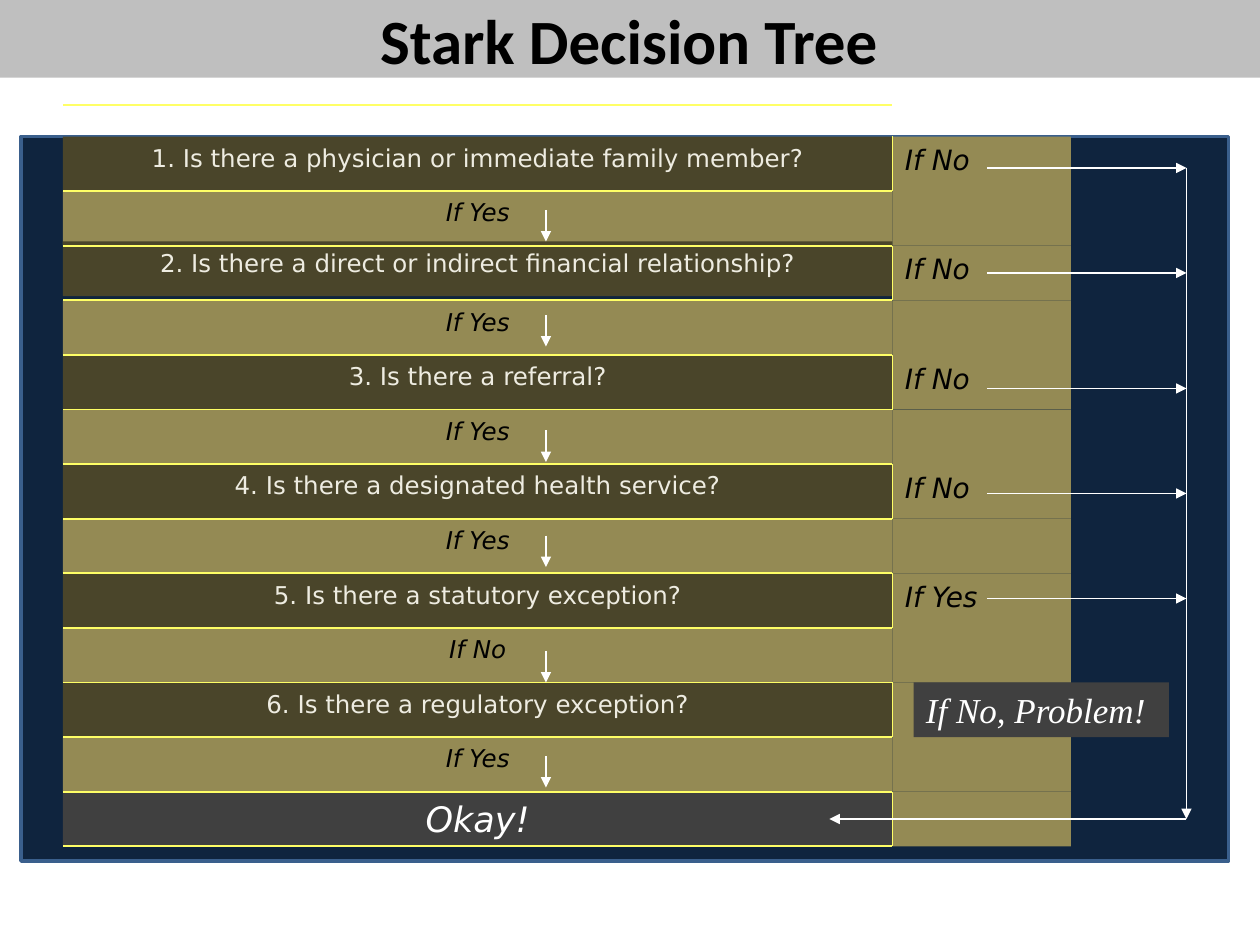
from pptx import Presentation
from pptx.dml.color import RGBColor
from pptx.enum.shapes import MSO_CONNECTOR as Connector, MSO_SHAPE as Shape
from pptx.enum.text import MSO_ANCHOR as Anchor, MSO_AUTO_SIZE as AutoSize, PP_ALIGN as Align
from pptx.oxml.ns import qn
from pptx.util import Pt
from lxml.etree import SubElement

BLACK = RGBColor(0x00, 0x00, 0x00)
WHITE = RGBColor(0xFF, 0xFF, 0xFF)
NAVY = RGBColor(0x0F, 0x24, 0x3E)
BLUE = RGBColor(0x3A, 0x5F, 0x8C)
SILVER = RGBColor(0xBF, 0xBF, 0xBF)
CHARCOAL = RGBColor(0x40, 0x40, 0x40)
KHAKI = RGBColor(0x94, 0x8A, 0x54)
OLIVE = RGBColor(0x4A, 0x45, 0x2A)
CREAM = RGBColor(0xEE, 0xEC, 0xE1)
YELLOW = RGBColor(0xFF, 0xFF, 0x66)
SANS = "DejaVu Sans"

# Content: question, answer leading to the side, answer leading down
TITLE = "Stark Decision Tree"
STEPS = [
    ("1. Is there a physician or immediate family member?", "If No", "If Yes"),
    ("2. Is there a direct or indirect financial relationship?", "If No", "If Yes"),
    ("3. Is there a referral?", "If No", "If Yes"),
    ("4. Is there a designated health service?", "If No", "If Yes"),
    ("5. Is there a statutory exception?", "If Yes", "If No"),
    ("6. Is there a regulatory exception?", "", "If Yes"),
]
OUTCOME = "Okay!"
PROBLEM = "If No, Problem!"

# Layout in points
LEFT, SPLIT, RIGHT = 36, 510, 612
TOP, ROW = 78, 31.2
QUESTION_SHIFT = {1: -2.4}  # the second question sits slightly higher
DOWN_X, DOWN_LENGTH = 312, 18
DOWN_TOPS = [120, 180, 246, 306, 372, 432]
BRANCH_X, RAIL_X = 564, 678
BRANCH_YS = [96, 156, 222, 282, 342]
OUTCOME_X, OUTCOME_Y = 474, 468

deck = Presentation()
deck.slide_width, deck.slide_height = Pt(720), Pt(540)
page = deck.slides.add_slide(deck.slide_layouts[5])


def write(para, text, size, color, font=SANS, bold=False, italic=False):
    span = para.add_run()
    span.text = text
    span.font.size = Pt(size)
    span.font.name = font
    span.font.bold = bold
    span.font.italic = italic
    span.font.color.rgb = color


def add_box(left, top, width, height, fill):
    box = page.shapes.add_shape(Shape.RECTANGLE, Pt(left), Pt(top), Pt(width), Pt(height))
    box.shadow.inherit = False
    box.fill.solid()
    box.fill.fore_color.rgb = fill
    box.line.fill.background()
    return box


def add_cell(left, right, top, fill, text="", size=14, color=BLACK, align=Align.CENTER, italic=True):
    box = add_box(left, top, right - left, ROW, fill)
    if text:
        frame = box.text_frame
        frame.word_wrap = True
        frame.vertical_anchor = Anchor.TOP
        para = frame.paragraphs[0]
        para.alignment = align
        para.space_before = Pt(0.2 * size)
        write(para, text, size, color, italic=italic)


def add_line(x1, y1, x2, y2, color, arrow=False):
    line = page.shapes.add_connector(Connector.STRAIGHT, Pt(x1), Pt(y1), Pt(x2), Pt(y2))
    line.line.color.rgb = color
    line.line.width = Pt(1)
    if arrow:
        SubElement(line.line._get_or_add_ln(), qn("a:tailEnd"), type="triangle")
    SubElement(line._element.spPr, qn("a:effectLst"))


def row_top(row):
    return TOP + row * ROW


# Background panel, sent behind the title
panel = add_box(12, TOP, 690, 414, NAVY)
panel.line.color.rgb = BLUE
panel.line.width = Pt(2)
title = page.shapes.title
title._element.addprevious(panel._element)

# Title band
title.left, title.top, title.width, title.height = Pt(-1.2), Pt(0), Pt(721.2), Pt(44.4)
title.fill.solid()
title.fill.fore_color.rgb = SILVER
title.text_frame.vertical_anchor = Anchor.MIDDLE
heading = title.text_frame.paragraphs[0]
heading.alignment = Align.CENTER
write(heading, TITLE, 36, BLACK, font="Calibri", bold=True)

# Answer rows, question rows and the outcome
for step, (question, side, down) in enumerate(STEPS):
    question_top, answer_top = row_top(2 * step), row_top(2 * step + 1)
    add_cell(SPLIT, RIGHT, answer_top, KHAKI)
    add_cell(LEFT, SPLIT, answer_top, KHAKI, down)
    add_cell(SPLIT, RIGHT, question_top, KHAKI, side, size=16, align=Align.LEFT)
    add_cell(LEFT, SPLIT, question_top + QUESTION_SHIFT.get(step, 0), OLIVE,
             question, color=CREAM, italic=False)
outcome_row = 2 * len(STEPS)
add_cell(SPLIT, RIGHT, row_top(outcome_row), KHAKI)
add_cell(LEFT, SPLIT, row_top(outcome_row), CHARCOAL, OUTCOME, size=20, color=WHITE)

# Yellow rules under each row and beside each question
for y in [60] + [row_top(row) for row in range(1, outcome_row + 2)]:
    add_line(LEFT, y, SPLIT, y, YELLOW)
for row in range(0, outcome_row + 1, 2):
    add_line(SPLIT, row_top(row), SPLIT, row_top(row + 1), YELLOW)

# Flow arrows: down, out to the rail, and back to the outcome
for y in DOWN_TOPS:
    add_line(DOWN_X, y, DOWN_X, y + DOWN_LENGTH, WHITE, arrow=True)
for y in BRANCH_YS:
    add_line(BRANCH_X, y, RAIL_X, y, WHITE, arrow=True)
add_line(RAIL_X, BRANCH_YS[0], RAIL_X, OUTCOME_Y, WHITE, arrow=True)
add_line(RAIL_X, OUTCOME_Y, OUTCOME_X, OUTCOME_Y, WHITE, arrow=True)

# Problem label
label = add_box(522, 390, 146, ROW, CHARCOAL)
label.text_frame.word_wrap = False
label.text_frame.auto_size = AutoSize.SHAPE_TO_FIT_TEXT
label.text_frame.vertical_anchor = Anchor.TOP
label_para = label.text_frame.paragraphs[0]
label_para.alignment = Align.LEFT
write(label_para, PROBLEM, 20, WHITE, font="Times New Roman", italic=True)

deck.save("out.pptx")
